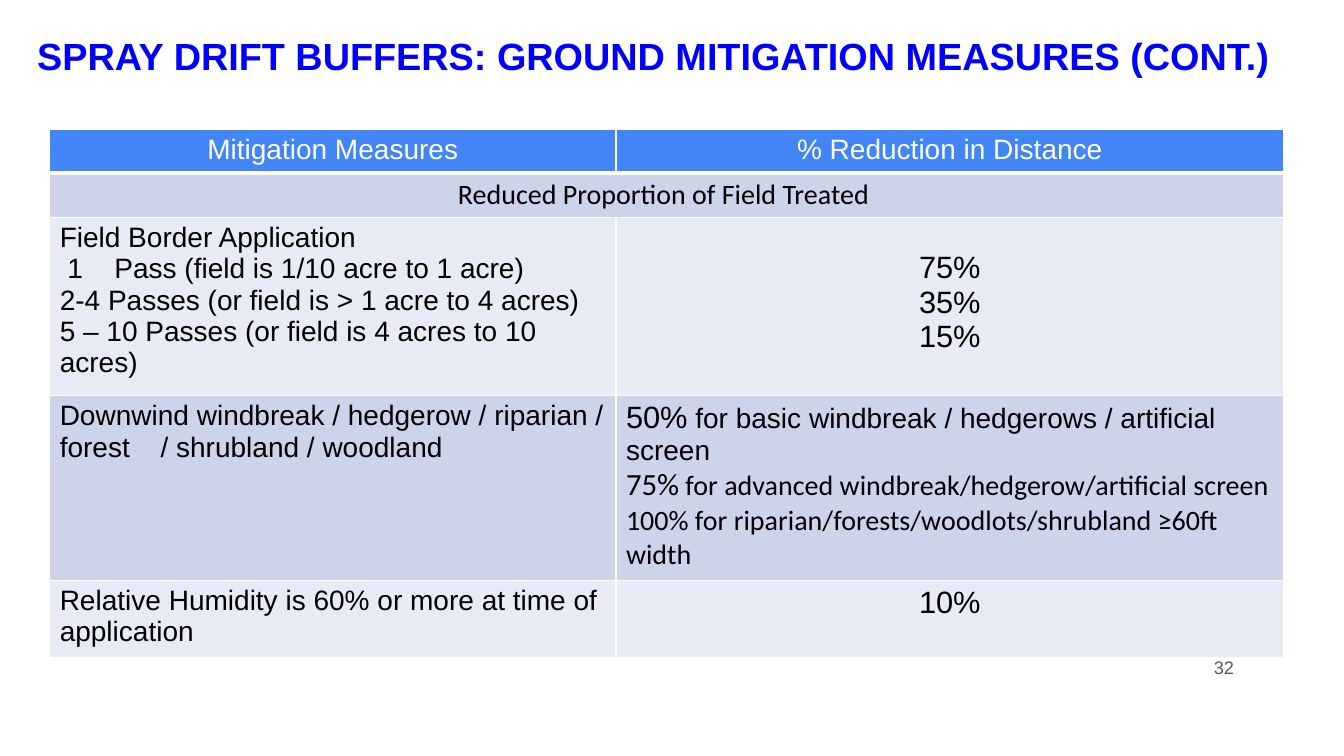
from lxml import etree
from pptx import Presentation
from pptx.dml.color import RGBColor
from pptx.enum import text
from pptx.oxml import ns
from pptx.util import Pt

HUES = {"title": "0000FF", "head": "4285F4", "dark": "CDD4EA", "light": "E8EBF5",
        "white": "FFFFFF", "black": "000000", "gray": "595959"}
LEFT, MID, RIGHT = text.PP_ALIGN.LEFT, text.PP_ALIGN.CENTER, text.PP_ALIGN.RIGHT


def write(frame, lines, align, hue, bold=False):
    """Fill a frame with lines, each a list of (text, size, font) runs."""
    frame.word_wrap = True
    for i, line in enumerate(lines):
        para = frame.paragraphs[0] if i == 0 else frame.add_paragraph()
        para.alignment = align
        for words, size, face in line:
            run = para.add_run()
            run.text = words
            form = {"size": Pt(size), "name": face, "bold": bold}
            for key, value in form.items():
                setattr(run.font, key, value)
            run.font.color.rgb = RGBColor.from_string(HUES[hue])


def edge(cell, side, width):
    """Draw one white border of a cell."""
    line = etree.SubElement(cell._tc.get_or_add_tcPr(), ns.qn(f"a:ln{side}"), w=str(Pt(width)))
    fill = etree.SubElement(line, ns.qn("a:solidFill"))
    etree.SubElement(fill, ns.qn("a:srgbClr"), val=HUES["white"])


deck = Presentation()
deck.slide_width, deck.slide_height = Pt(960), Pt(540)
slide = deck.slides.add_slide(deck.slide_layouts[6])

# Title and page number
labels = [
    ((19.5, 8.5, 926, 65.5), "SPRAY DRIFT BUFFERS: GROUND MITIGATION MEASURES (CONT.)",
     27, LEFT, "title", True),
    ((828, 463, 60.5, 29), "32", 13, RIGHT, "gray", False),
]
for place, words, size, align, hue, bold in labels:
    frame = slide.shapes.add_textbox(*map(Pt, place)).text_frame
    frame.vertical_anchor = text.MSO_ANCHOR.MIDDLE
    write(frame, [[(words, size, "Arial")]], align, hue, bold)
    frame.paragraphs[0].line_spacing = 0.9

# Table content: height, fill, text colour, then (alignment, lines) per cell
A, C = "Arial", "Calibri"
rows = [
    (30, "head", "white", [
        (MID, [[("Mitigation Measures", 20, A)]]),
        (MID, [[("% Reduction in Distance", 20, A)]])]),
    (31.5, "dark", "black", [
        (MID, [[("Reduced Proportion of Field Treated ", 20, C)]]),
        (MID, [])]),
    (119, "light", "black", [
        (LEFT, [[("Field Border Application", 20, A)],
                [("1\tPass (field is 1/10 acre to 1 acre)", 20, A)],
                [("2-4 Passes (or field is > 1 acre to 4 acres)", 20, A)],
                [("5 – 10 Passes (or field is 4 acres to 10 acres)", 20, A)]]),
        (MID, [[(share, 22, A)] for share in ("75%", "35%", "15%")])]),
    (129.5, "dark", "black", [
        (LEFT, [[("Downwind windbreak / hedgerow / riparian / forest \t/ shrubland / woodland",
                  20, A)]]),
        (LEFT, [[("50%", 22, A),
                 (" for basic windbreak / hedgerows / artificial screen", 20, A)],
                [("75%", 22, C),
                 (" for advanced windbreak/hedgerow/artificial screen", 20, C)],
                [("100% for riparian/forests/woodlots/shrubland ≥60ft width", 20, C)]])]),
    (52.5, "light", "black", [
        (LEFT, [[("Relative Humidity is 60% or more at time of application", 20, A)]]),
        (MID, [[("10%", 22, A)]])]),
]

# Table
high = sum(row[0] for row in rows)
table = slide.shapes.add_table(len(rows), 2, Pt(35.5), Pt(92.5), Pt(881.5), Pt(high)).table
for col, width in zip(table.columns, (404.5, 477)):
    col.width = Pt(width)
for r, (height, fill, hue, cells) in enumerate(rows):
    table.rows[r].height = Pt(height)
    for c, (align, lines) in enumerate(cells):
        cell = table.cell(r, c)
        for side in "LRTB":
            thick = (r, side) in ((0, "B"), (1, "T"))
            edge(cell, side, 3 if thick else 1)
        cell.fill.solid()
        cell.fill.fore_color.rgb = RGBColor.from_string(HUES[fill])
        write(cell.text_frame, lines, align, hue)
table.cell(1, 0).merge(table.cell(1, 1))

# Line up the shares with the passes
table.cell(2, 1).margin_top = Pt(24)
one = table.cell(2, 0).text_frame.paragraphs[1]._p.get_or_add_pPr()
one.set("marL", str(Pt(39)))
one.set("indent", str(Pt(-33.5)))

deck.save("out.pptx")
